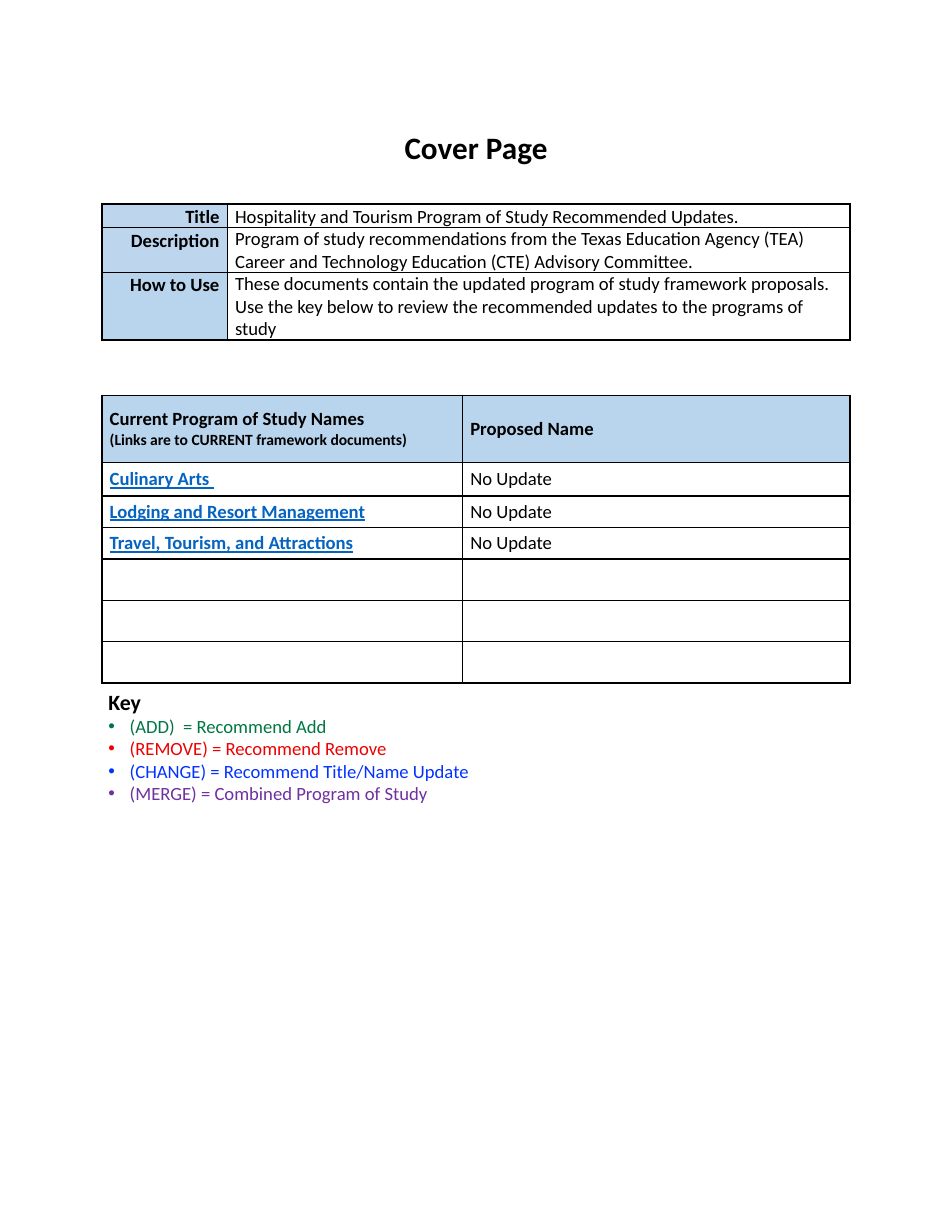
from lxml.etree import SubElement
from pptx import Presentation
from pptx.dml.color import RGBColor
from pptx.enum.text import MSO_ANCHOR, MSO_AUTO_SIZE, PP_ALIGN
from pptx.oxml.ns import qn
from pptx.util import Inches, Pt

BLACK = RGBColor(0x00, 0x00, 0x00)
WHITE = RGBColor(0xFF, 0xFF, 0xFF)
PALE_BLUE = RGBColor(0xBD, 0xD6, 0xEE)
HEADER_BLUE = RGBColor(0xB9, 0xD4, 0xED)
LINK_BLUE = RGBColor(0x05, 0x63, 0xC1)
GREEN = RGBColor(0x00, 0x77, 0x42)
RED = RGBColor(0xED, 0x00, 0x00)
BLUE = RGBColor(0x04, 0x32, 0xFF)
PURPLE = RGBColor(0x70, 0x30, 0xA0)
FONT = "Calibri"

HEADING = "Cover Page"
ABOUT = [
    ("Title", "Hospitality and Tourism Program of Study Recommended Updates.", PALE_BLUE),
    ("Description", "Program of study recommendations from the Texas Education Agency (TEA) "
     "Career and Technology Education (CTE) Advisory Committee.", PALE_BLUE),
    ("How to Use", "These documents contain the updated program of study framework proposals. "
     "Use the key below to review the recommended updates to the programs of study", HEADER_BLUE),
]
PROGRAM_HEADER = ("Current Program of Study Names\n(Links are to CURRENT framework documents)",
                  "Proposed Name")
PROGRAMS = [
    ("Culinary Arts ", "No Update"),
    ("Lodging and Resort Management", "No Update"),
    ("Travel, Tourism, and Attractions", "No Update"),
    ("", ""), ("", ""), ("", ""),
]
KEY = [
    ("(ADD)  = Recommend Add", GREEN),
    ("(REMOVE) = Recommend Remove", RED),
    ("(CHANGE) = Recommend Title/Name Update", BLUE),
    ("(MERGE) = Combined Program of Study", PURPLE),
]

TABLE_LEFT = 0.91
ABOUT_COLUMNS, ABOUT_ROWS = (1.12, 5.56), (0.21, 0.4, 0.6)
PROGRAM_COLUMNS = (3.22, 3.46)
PROGRAM_ROWS = (0.6, 0.3, 0.28, 0.28, 0.37, 0.37, 0.37)


def style(paragraph, size=12, bold=False, color=BLACK, underline=None):
    for run in paragraph.runs:
        font = run.font
        font.name, font.size, font.bold, font.underline = FONT, Pt(size), bold, underline
        font.color.rgb = color


def add_border(cell):
    properties = cell._tc.get_or_add_tcPr()
    for side in ("lnL", "lnR", "lnT", "lnB"):
        line = SubElement(properties, qn(f"a:{side}"), w=str(Pt(1)))
        solid = SubElement(line, qn("a:solidFill"))
        SubElement(solid, qn("a:srgbClr"), val=str(BLACK))


def fill_cell(cell, text, fill=None, anchor=MSO_ANCHOR.TOP, **font):
    cell.text = text
    cell.vertical_anchor = anchor
    cell.margin_left = cell.margin_right = Inches(0.07)
    cell.margin_top = cell.margin_bottom = 0
    add_border(cell)
    if fill is None:
        cell.fill.background()
    else:
        cell.fill.solid()
        cell.fill.fore_color.rgb = fill
    for paragraph in cell.text_frame.paragraphs:
        style(paragraph, **font)


def add_plain_table(slide, top, columns, rows):
    table = slide.shapes.add_table(
        len(rows), len(columns), Inches(TABLE_LEFT), Inches(top),
        Inches(sum(columns)), Inches(sum(rows))).table
    table.first_row = table.horz_banding = False
    for column, width in zip(table.columns, columns):
        column.width = Inches(width)
    for row, height in zip(table.rows, rows):
        row.height = Inches(height)
    return table


def add_heading(slide):
    heading = slide.shapes.title
    heading.left, heading.top = 0, Inches(1.06)
    heading.width, heading.height = Inches(8.5), Inches(0.5)
    frame = heading.text_frame
    frame.text = HEADING
    frame.word_wrap = False
    frame.auto_size = MSO_AUTO_SIZE.SHAPE_TO_FIT_TEXT
    frame.vertical_anchor = MSO_ANCHOR.MIDDLE
    frame.paragraphs[0].alignment = PP_ALIGN.CENTER
    style(frame.paragraphs[0], size=20, bold=True)


def add_about(slide):
    about = add_plain_table(slide, 1.82, ABOUT_COLUMNS, ABOUT_ROWS)
    for row, (label, detail, fill) in enumerate(ABOUT):
        label_cell, detail_cell = about.cell(row, 0), about.cell(row, 1)
        fill_cell(label_cell, label, fill, bold=True)
        fill_cell(detail_cell, detail)
        label_cell.text_frame.paragraphs[0].alignment = PP_ALIGN.RIGHT
        label_cell.text_frame.paragraphs[0].line_spacing = 1.07
    about.cell(0, 1).text_frame.paragraphs[0].line_spacing = 1.07


def add_programs(slide):
    programs = add_plain_table(slide, 3.53, PROGRAM_COLUMNS, PROGRAM_ROWS)
    middle = MSO_ANCHOR.MIDDLE
    for column, header in enumerate(PROGRAM_HEADER):
        fill_cell(programs.cell(0, column), header, HEADER_BLUE, middle, bold=True)
    style(programs.cell(0, 0).text_frame.paragraphs[1], size=10, bold=True)
    for row, (current, proposed) in enumerate(PROGRAMS, start=1):
        fill_cell(programs.cell(row, 0), current, WHITE, middle,
                  bold=True, color=LINK_BLUE, underline=True)
        fill_cell(programs.cell(row, 1), proposed, anchor=middle)


def add_key(slide):
    frame = slide.shapes.add_textbox(
        Inches(0.87), Inches(6.1), Inches(5.7), Inches(1.14)).text_frame
    frame.word_wrap = True
    frame.auto_size = MSO_AUTO_SIZE.SHAPE_TO_FIT_TEXT
    frame.text = "Key"
    style(frame.paragraphs[0], size=14, bold=True)
    for meaning, color in KEY:
        paragraph = frame.add_paragraph()
        paragraph.text = meaning
        style(paragraph, color=color)
        properties = paragraph._p.get_or_add_pPr()
        properties.set("marL", str(Inches(0.19)))
        properties.set("indent", str(-Inches(0.19)))
        SubElement(properties, qn("a:buFont"), typeface="Arial")
        SubElement(properties, qn("a:buChar"), char="•")


def main():
    presentation = Presentation()
    presentation.slide_width, presentation.slide_height = Inches(8.5), Inches(11)
    slide = presentation.slides.add_slide(presentation.slide_layouts[5])
    add_heading(slide)
    add_about(slide)
    add_programs(slide)
    add_key(slide)
    presentation.save("out.pptx")


if __name__ == "__main__":
    main()
